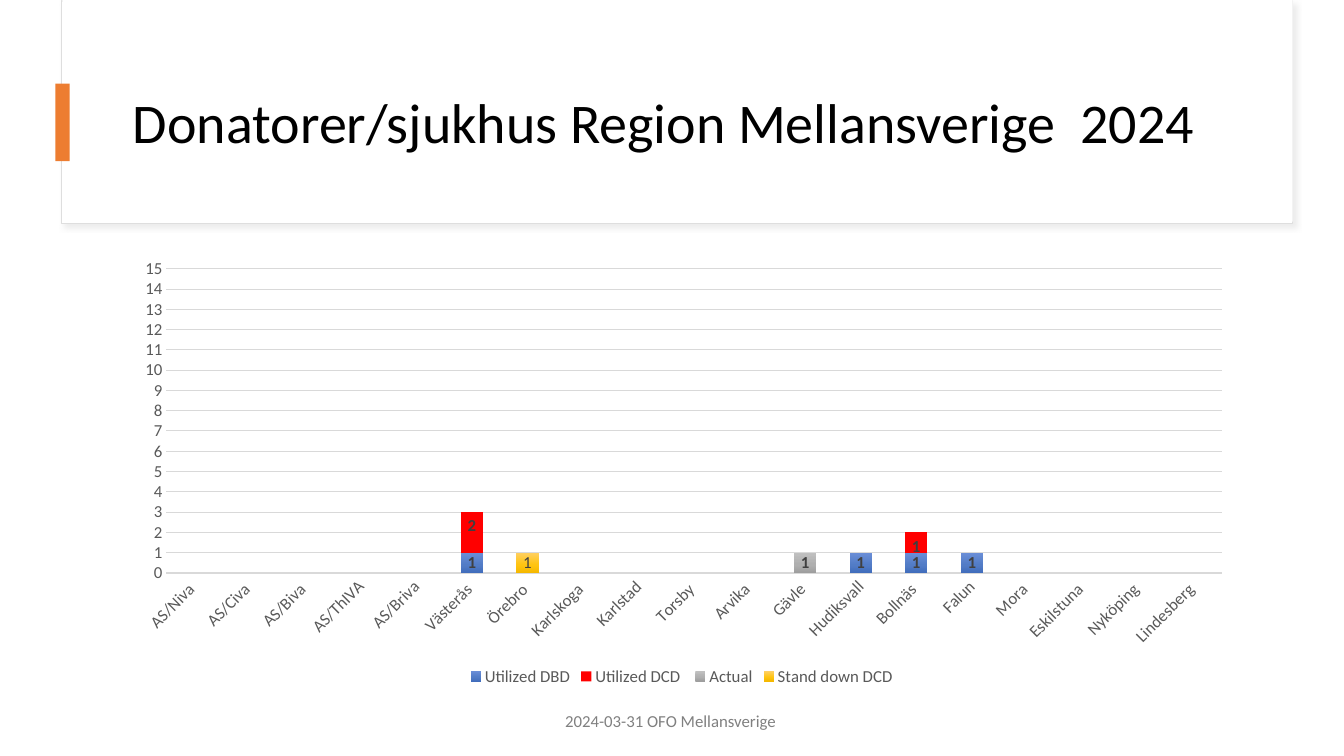
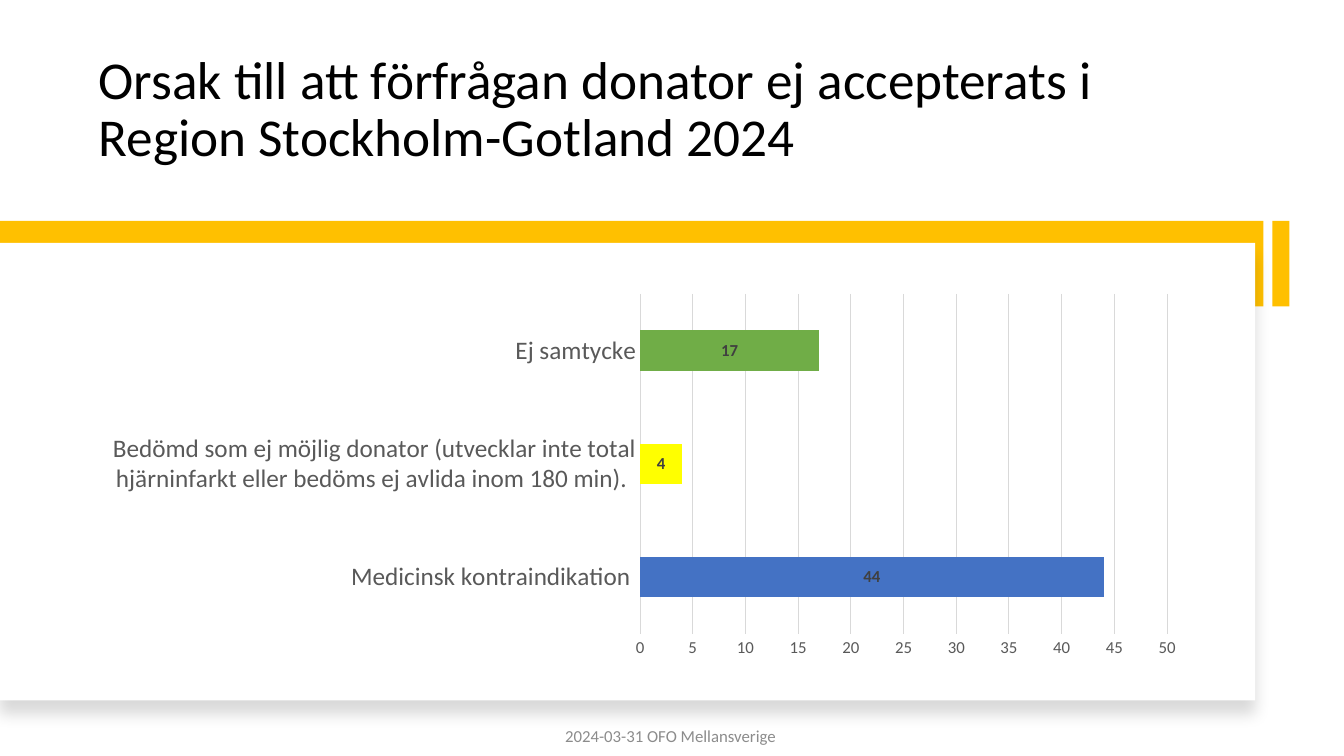
from lxml import etree
from pptx import Presentation
from pptx.chart.data import CategoryChartData
from pptx.dml.color import RGBColor
from pptx.enum.chart import XL_CHART_TYPE, XL_LABEL_POSITION, XL_LEGEND_POSITION, XL_TICK_MARK
from pptx.enum.shapes import MSO_SHAPE
from pptx.enum.text import MSO_ANCHOR, PP_ALIGN
from pptx.oxml.ns import qn
from pptx.util import Inches, Pt

COLUMN_STACKED = XL_CHART_TYPE.COLUMN_STACKED
BAR_CLUSTERED = XL_CHART_TYPE.BAR_CLUSTERED
CENTER_LABEL, INSIDE_END = XL_LABEL_POSITION.CENTER, XL_LABEL_POSITION.INSIDE_END
LEGEND_BOTTOM = XL_LEGEND_POSITION.BOTTOM
NO_TICK = XL_TICK_MARK.NONE
RECTANGLE = MSO_SHAPE.RECTANGLE
MIDDLE, BOTTOM = MSO_ANCHOR.MIDDLE, MSO_ANCHOR.BOTTOM
LEFT, CENTER = PP_ALIGN.LEFT, PP_ALIGN.CENTER

FONT = "Calibri"
WHITE, BLACK, ORANGE, AMBER = "FFFFFF", "000000", "ED7D31", "FFC000"
AXIS_TEXT, LABEL_TEXT, GRID = "595959", "404040", "D9D9D9"
FOOTER = "2024-03-31 OFO Mellansverige "

HOSPITALS = ["AS/Niva ", "AS/Civa ", "AS/Biva ", "AS/ThIVA", "AS/Briva", "Västerås ",
             "Örebro ", "Karlskoga ", "Karlstad", "Torsby ", "Arvika ", "Gävle ",
             "Hudiksvall", "Bollnäs ", "Falun", "Mora ", "Eskilstuna ", "Nyköping ",
             "Lindesberg "]
# name, donors by hospital, fill (one colour or gradient stops), label position, bold label
DONORS = [
    ("Utilized DBD", {"Västerås ": 1, "Hudiksvall": 1, "Bollnäs ": 1, "Falun": 1},
     {0: "6A8ED7", 60: "527CC6", 100: "416DBC"}, CENTER_LABEL, True),
    ("Utilized DCD ", {"Västerås ": 2, "Bollnäs ": 1}, "FF0000", INSIDE_END, True),
    ("Actual", {"Gävle ": 1}, {0: "C0C0C0", 60: "AFAFAF", 100: "9E9E9E"}, None, True),
    ("Stand down DCD ", {"Örebro ": 1},
     {0: "FFD063", 60: "FFC410", 100: "F5B800"}, None, False),
]
# reason, number of cases, bar colour
REASONS = [
    ("Medicinsk kontraindikation ", 44, "4472C4"),
    ("Bedömd som ej möjlig donator (utvecklar inte total hjärninfarkt "
     "eller bedöms ej avlida inom 180 min). ", 4, "FFFF00"),
    ("Ej samtycke", 17, "70AD47"),
]


def rgb(value):
    return RGBColor.from_string(value)


def add_xml(parent, tag, **attributes):
    return etree.SubElement(parent, qn(tag), {k: str(v) for k, v in attributes.items()})


def style_font(font, size, color, bold=False):
    font.name, font.size, font.bold = FONT, Pt(size), bold
    font.color.rgb = rgb(color)


def fill_solid(fill, color):
    fill.solid()
    fill.fore_color.rgb = rgb(color)


def fill_series(series, fill):
    """Fill with one colour, or top to bottom with a {percent: colour} gradient."""
    if isinstance(fill, str):
        fill_solid(series.format.fill, fill)
        return
    series.format.fill.gradient()
    gradient = series.format.element.find(".//" + qn("a:gradFill")) \
        if hasattr(series.format, "element") else series._element.find(".//" + qn("a:gradFill"))
    for child in list(gradient):
        gradient.remove(child)
    stops = add_xml(gradient, "a:gsLst")
    for percent, color in fill.items():
        add_xml(add_xml(stops, "a:gs", pos=percent * 1000), "a:srgbClr", val=color)
    add_xml(gradient, "a:lin", ang=90 * 60000, scaled=0)


def label_series(series, position, bold):
    labels = series.data_labels
    labels.show_value = True
    style_font(labels.font, 12, LABEL_TEXT, bold)
    if position is not None:
        labels.position = position


class Deck:
    """Holds the presentation, its shared style and the current slide."""

    def __init__(self):
        self.prs = Presentation()
        self.prs.slide_width, self.prs.slide_height = Inches(13.33), Inches(7.5)
        self.slide = None

    def new_slide(self):
        self.slide = self.prs.slides.add_slide(self.prs.slide_layouts[6])
        fill_solid(self.slide.background.fill, WHITE)

    def rect(self, x, y, w, h, fill, line=None, shadow=None):
        """Draw a rectangle; shadow is (colour, opacity %, blur pt, distance pt, angle)."""
        shape = self.slide.shapes.add_shape(RECTANGLE, *map(Inches, (x, y, w, h)))
        fill_solid(shape.fill, fill)
        if line:
            shape.line.color.rgb = rgb(line)
            shape.line.width = Pt(0.75)
        else:
            shape.line.fill.background()
        shape.shadow.inherit = False
        if shadow:
            color, opacity, blur, distance, angle = shadow
            effects = shape._element.spPr.find(qn("a:effectLst"))
            outer = add_xml(effects, "a:outerShdw", blurRad=Pt(blur), dist=Pt(distance),
                            dir=angle * 60000, algn="t", rotWithShape=0)
            add_xml(add_xml(outer, "a:srgbClr", val=color), "a:alpha", val=opacity * 1000)

    def text(self, x, y, w, h, words, size, color, anchor=MIDDLE, align=LEFT):
        frame = self.slide.shapes.add_textbox(*map(Inches, (x, y, w, h))).text_frame
        frame.word_wrap = True
        frame.vertical_anchor = anchor
        frame.text = words
        paragraph = frame.paragraphs[0]
        paragraph.alignment = align
        style_font(paragraph.runs[0].font, size, color)
        return paragraph

    def title(self, x, y, w, h, words, size, anchor=MIDDLE):
        self.text(x, y, w, h, words, size, BLACK, anchor).line_spacing = 0.9

    def footer(self, y, color):
        self.text(4.42, y, 4.5, 0.4, FOOTER, 12, color, align=CENTER).space_after = Pt(6)

    def chart(self, x, y, w, h, kind, data, top, step, gap, category_size):
        """Add a chart whose value axis runs from 0 to top."""
        chart = self.slide.shapes.add_chart(kind, *map(Inches, (x, y, w, h)), data).chart
        style_font(chart.font, 10, BLACK)
        chart.has_title = chart.has_legend = False
        chart.plots[0].gap_width = gap
        chart.plots[0].vary_by_categories = False
        categories, values = chart.category_axis, chart.value_axis
        for axis, size in ((categories, category_size), (values, 12)):
            axis.major_tick_mark = axis.minor_tick_mark = NO_TICK
            style_font(axis.tick_labels.font, size, AXIS_TEXT)
        categories.format.line.color.rgb = rgb(GRID)
        categories.format.line.width = Pt(0.75)
        values.format.line.fill.background()
        values.minimum_scale, values.maximum_scale, values.major_unit = 0, top, step
        values.has_major_gridlines = True
        grid = values.major_gridlines.format.line
        grid.color.rgb = rgb(GRID)
        grid.width = Pt(0.75)
        return chart


def donors_slide(deck):
    deck.new_slide()
    deck.rect(0.61, 0.01, 12.21, 2.21, WHITE, "DEDEDE", (GRID, 50, 4, 3, 45))
    deck.rect(0.62, 0, 12.2, 2.2, WHITE)
    deck.title(1.22, 0.6, 11.12, 1.29, "Donatorer/sjukhus Region Mellansverige  2024", 40)
    deck.rect(0.55, 0.83, 0.14, 0.77, ORANGE)
    deck.footer(6.95, "808080")

    data = CategoryChartData()
    data.categories = HOSPITALS
    for name, donors, *_ in DONORS:
        data.add_series(name, [donors.get(hospital) for hospital in HOSPITALS])
    chart = deck.chart(1.22, 2.48, 11.12, 4.37, COLUMN_STACKED, data, 15, 1, 150, 12)
    chart.plots[0].overlap = 100
    chart.category_axis.format.line.width = Pt(1)
    slant = chart.category_axis._element.find(qn("c:txPr")).find(qn("a:bodyPr"))
    slant.set("rot", str(-45 * 60000))
    chart.has_legend = True
    chart.legend.position = LEGEND_BOTTOM
    chart.legend.include_in_layout = False
    style_font(chart.legend.font, 12, AXIS_TEXT)
    for series, (_, _, fill, position, bold) in zip(chart.plots[0].series, DONORS):
        fill_series(series, fill)
        label_series(series, position, bold)


def reasons_slide(deck):
    deck.new_slide()
    deck.title(0.88, 0.42, 10.1, 1.3, "Orsak till att förfrågan donator ej accepterats i "
               "Region Stockholm-Gotland 2024", 38, BOTTOM)
    deck.rect(12.62, 2.19, 0.17, 0.85, AMBER)
    deck.rect(0, 2.19, 12.53, 0.85, AMBER)
    deck.rect(0, 2.41, 12.45, 4.54, WHITE, shadow=(BLACK, 15, 11, 10, 90))
    deck.footer(7.1, "8C8C8C")

    reasons, cases, colors = zip(*REASONS)
    data = CategoryChartData()
    data.categories = reasons
    data.add_series("Series 1", cases)
    chart = deck.chart(0.9, 2.84, 10.98, 3.76, BAR_CLUSTERED, data, 50, 5, 182, 18)
    series = chart.plots[0].series[0]
    fill_series(series, colors[0])
    for index, color in enumerate(colors[1:], 1):
        fill_solid(series.points[index].format.fill, color)
    label_series(series, CENTER_LABEL, True)


def main():
    deck = Deck()
    donors_slide(deck)
    reasons_slide(deck)
    deck.prs.save("out.pptx")


if __name__ == "__main__":
    main()
